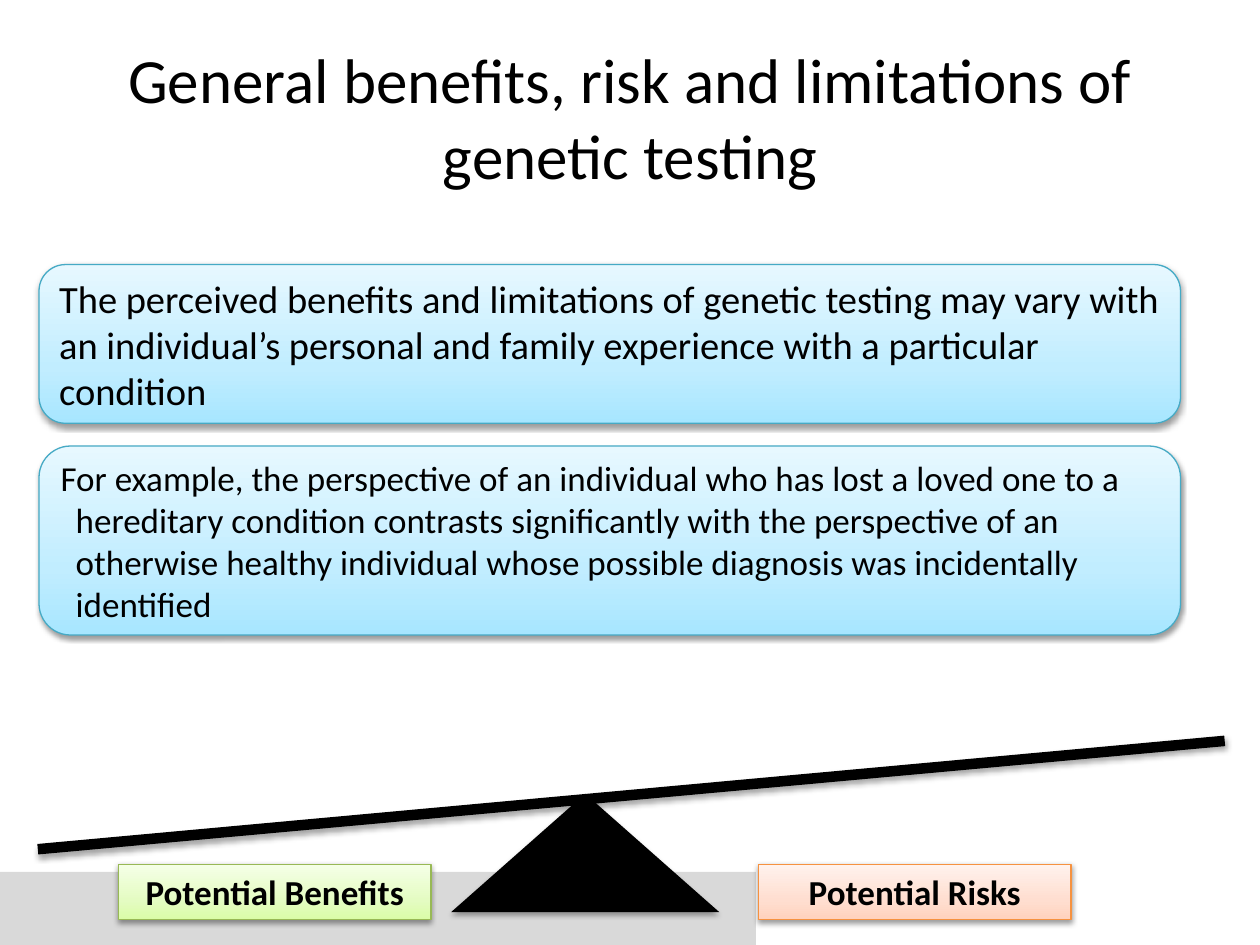
from dataclasses import dataclass
from typing import Optional

from lxml.etree import SubElement
from pptx import Presentation
from pptx.dml.color import RGBColor
from pptx.enum.shapes import MSO_CONNECTOR, MSO_SHAPE as Shape
from pptx.enum.text import MSO_ANCHOR as Anchor, MSO_AUTO_SIZE as AutoSize, PP_ALIGN as Align
from pptx.oxml.ns import qn
from pptx.util import Inches, Pt

COLUMNS, ROWS = 100, 75
SLIDE_WIDTH, SLIDE_HEIGHT = Inches(10), Inches(7.5)
FONT, BLACK = "Calibri", "000000"
STOP_POSITIONS = (0, 35, 100)


@dataclass(frozen=True)
class Area:
    """A rectangle in grid columns and rows."""
    column: float
    row: float
    columns: float
    rows: float


@dataclass(frozen=True)
class Style:
    stops: tuple[str, str, str]
    line: str


@dataclass(frozen=True)
class Panel:
    text: str
    area: Area
    style: Style
    size: int
    hanging: float = 0


@dataclass(frozen=True)
class Label:
    text: str
    column: float
    style: Style


BLUE = Style(("A7E6FF", "C1EDFF", "E7F8FF"), "46AAC5")
GREEN = Style(("DAFDA7", "E4FCC2", "F5FFE7"), "98B955")
ORANGE = Style(("FFD2BD", "FFDED0", "FFF2ED"), "F69240")

TITLE = "General benefits, risk and limitations of genetic testing"
PANELS = (
    Panel("The perceived benefits and limitations of genetic testing may vary with an "
          "individual’s personal and family experience with a particular condition",
          Area(3.1, 21, 90.6, 12.6), BLUE, 22),
    Panel("For example, the perspective of an individual who has lost a loved one to a "
          "hereditary condition contrasts significantly with the perspective of an otherwise "
          "healthy individual whose possible diagnosis was incidentally identified",
          Area(3.1, 35.4, 90.6, 15), BLUE, 20, hanging=1.2),
)
LABELS = (Label("Potential Benefits", 9.4, GREEN), Label("Potential Risks", 60.2, ORANGE))


def x(columns: float) -> int:
    return round(SLIDE_WIDTH * columns / COLUMNS)


def y(rows: float) -> int:
    return round(SLIDE_HEIGHT * rows / ROWS)


def bounds(area: Area) -> tuple[int, int, int, int]:
    return x(area.column), y(area.row), x(area.columns), y(area.rows)


def color(value: str) -> RGBColor:
    return RGBColor.from_string(value)


def add_shadow(shape, opacity: int, distance: float) -> None:
    """Give the shape a soft black shadow straight below it."""
    properties = shape._element.spPr
    for old in properties.findall(qn("a:effectLst")):
        properties.remove(old)
    effects = SubElement(properties, qn("a:effectLst"))
    shadow = SubElement(effects, qn("a:outerShdw"), blurRad=str(Pt(3.1)),
                        dist=str(Pt(distance)), dir="5400000", rotWithShape="0")
    shade = SubElement(shadow, qn("a:srgbClr"), val=BLACK)
    SubElement(shade, qn("a:alpha"), val=str(opacity * 1000))


def fill_gradient(shape, stops: tuple[str, str, str]) -> None:
    shape.fill.gradient()
    shape.fill.gradient_angle = 90
    stop_list = shape._element.spPr.find(qn("a:gradFill")).find(qn("a:gsLst"))
    for old in list(stop_list):
        stop_list.remove(old)
    for position, value in zip(STOP_POSITIONS, stops):
        stop = SubElement(stop_list, qn("a:gs"), pos=str(position * 1000))
        SubElement(stop, qn("a:srgbClr"), val=value)


def write(shape, text: str, *, size: int, bold: bool = False, align=Align.LEFT,
          anchor=Anchor.MIDDLE, hanging: float = 0) -> None:
    frame = shape.text_frame
    frame.word_wrap = True
    frame.vertical_anchor = anchor
    paragraph = frame.paragraphs[0]
    paragraph.alignment = align
    if hanging:
        properties = paragraph._p.get_or_add_pPr()
        properties.set("marL", str(x(hanging)))
        properties.set("indent", str(-x(hanging)))
    run = paragraph.add_run()
    run.text = text
    run.font.name, run.font.size, run.font.bold = FONT, Pt(size), bold
    run.font.color.rgb = color(BLACK)


def add_solid(slide, kind, area: Area, fill: str):
    shape = slide.shapes.add_shape(kind, *bounds(area))
    shape.shadow.inherit = False
    shape.fill.solid()
    shape.fill.fore_color.rgb = color(fill)
    shape.line.fill.background()
    return shape


def add_card(slide, kind, area: Area, style: Style):
    """Add a gradient shape with a thin outline and a shadow."""
    shape = slide.shapes.add_shape(kind, *bounds(area))
    fill_gradient(shape, style.stops)
    shape.line.color.rgb = color(style.line)
    shape.line.width = Pt(0.75)
    add_shadow(shape, 38, 1.6)
    return shape


def add_seesaw(slide) -> None:
    pivot = add_solid(slide, Shape.ISOSCELES_TRIANGLE, Area(35.8, 63, 21.3, 9.4), BLACK)
    beam = slide.shapes.add_connector(MSO_CONNECTOR.STRAIGHT, x(3), y(67.4), x(97.2), y(58.8))
    beam.line.color.rgb = color(BLACK)
    beam.line.width = Pt(6)
    for part in (pivot, beam):
        add_shadow(part, 35, 1.8)


def main() -> None:
    presentation = Presentation()
    presentation.slide_width, presentation.slide_height = SLIDE_WIDTH, SLIDE_HEIGHT
    slide = presentation.slides.add_slide(presentation.slide_layouts[5])

    add_solid(slide, Shape.RECTANGLE, Area(0, 69.2, 60, 5.8), "D9D9D9")

    title = slide.shapes.title
    title.left, title.top, title.width, title.height = bounds(Area(5, 3, 90, 12.5))
    write(title, TITLE, size=36, align=Align.CENTER)

    for panel in PANELS:
        card = add_card(slide, Shape.ROUNDED_RECTANGLE, panel.area, panel.style)
        write(card, panel.text, size=panel.size, hanging=panel.hanging)

    add_seesaw(slide)

    for label in LABELS:
        card = add_card(slide, Shape.RECTANGLE, Area(label.column, 68.6, 24.8, 4.4), label.style)
        write(card, label.text, size=20, bold=True, align=Align.CENTER, anchor=Anchor.TOP)
        card.text_frame.auto_size = AutoSize.SHAPE_TO_FIT_TEXT

    presentation.save("out.pptx")


if __name__ == "__main__":
    main()
